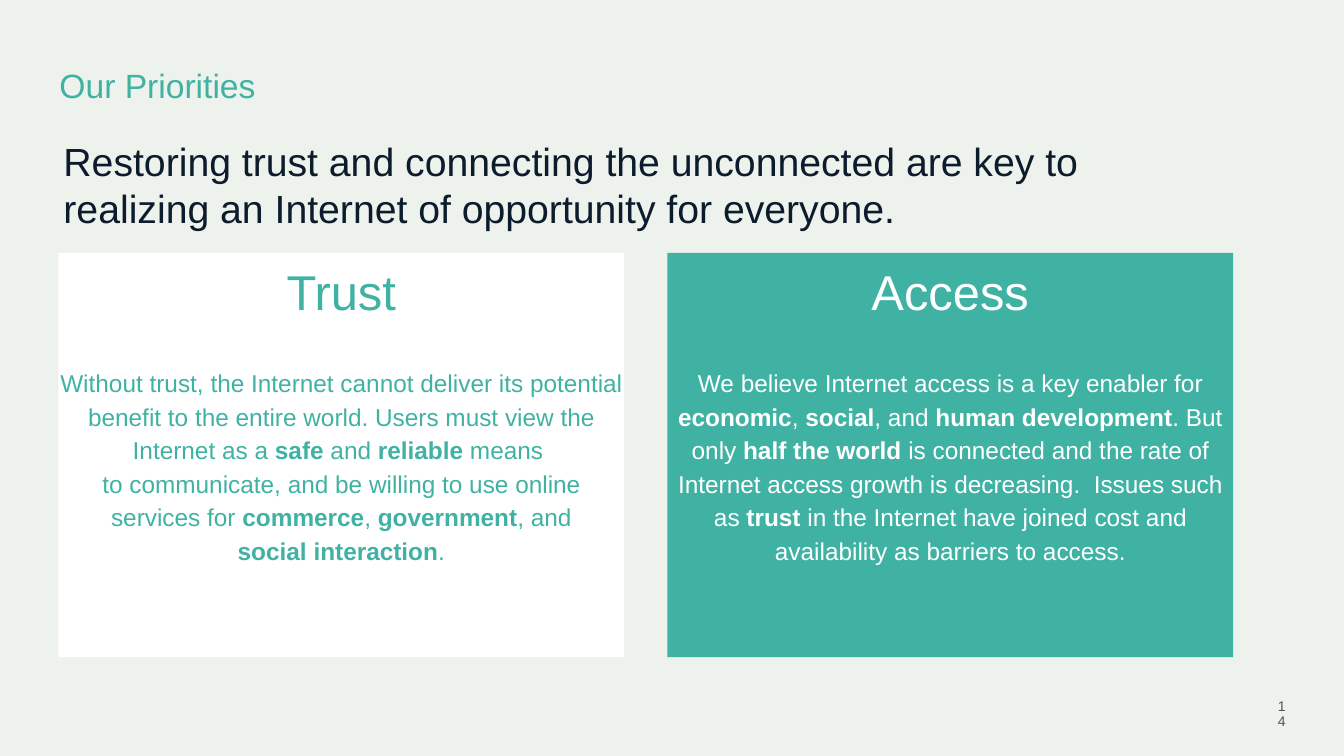
import pptx
import pptx.util
import pptx.dml.color
import pptx.enum.shapes
import pptx.enum.text

Inches = pptx.util.Inches
Pt = pptx.util.Pt
Align = pptx.enum.text.PP_ALIGN

COLORS = {
    "background": "EEF2EC",
    "teal": "40B2A4",
    "white": "FFFFFF",
    "navy": "0C1C2C",
    "grey": "535353",
}

TRUST = (
    "Without trust, the Internet cannot deliver its potential benefit to the entire world. "
    "Users must view the Internet as a **safe** and **reliable** means \n"
    "to communicate, and be willing to use online services for "
    "**commerce**, **government**, and\n**social interaction**."
)
ACCESS = (
    "We believe Internet access is a key enabler for **economic**, **social**, and "
    "**human development**. But only **half the world **is connected and the rate of "
    "Internet access growth is decreasing.  Issues such as **trust** in the Internet "
    "have joined cost and availability as barriers to access."
)


def color(name):
    return pptx.dml.color.RGBColor.from_string(COLORS[name])


def apply(target, values):
    for name, value in values.items():
        setattr(target, name, value)


def prepare_frame(frame, inset=0):
    margin = Inches(inset)
    apply(frame, {
        "word_wrap": True,
        "vertical_anchor": pptx.enum.text.MSO_ANCHOR.TOP,
        "margin_left": margin,
        "margin_top": margin,
        "margin_right": margin,
        "margin_bottom": margin,
    })


def write_paragraph(paragraph, text, size, ink, **layout):
    apply(paragraph, layout)
    for part, phrase in enumerate(text.split("**")):
        for line, words in enumerate(phrase.split("\n")):
            if line:
                paragraph.add_line_break()
            if words:
                run = paragraph.add_run()
                run.text = words
                apply(run.font, {"name": "Arial", "size": Pt(size), "bold": part % 2 == 1})
                run.font.color.rgb = color(ink)


def add_label(slide, box, text, size, ink, inset=0, **layout):
    frame = slide.shapes.add_textbox(*map(Inches, box)).text_frame
    prepare_frame(frame, inset)
    write_paragraph(frame.paragraphs[0], text, size, ink, **layout)


def add_priority(slide, box, heading, body, fill, ink):
    card = slide.shapes.add_shape(
        pptx.enum.shapes.MSO_SHAPE.RECTANGLE, *map(Inches, box))
    card.shadow.inherit = False
    card.fill.solid()
    card.fill.fore_color.rgb = color(fill)
    card.line.fill.background()
    frame = card.text_frame
    prepare_frame(frame)
    layout = {"alignment": Align.CENTER, "line_spacing": 1.15}
    write_paragraph(frame.paragraphs[0], heading, 34.9, ink, **layout)
    write_paragraph(frame.add_paragraph(), body, 17.4, ink, space_before=Pt(31), **layout)


def add_priorities(slide, box):
    left, top, width, height = box
    gap = 0.43
    card_width = (width - gap) / 2
    cards = [("Trust", TRUST, "white", "teal"), ("Access", ACCESS, "teal", "white")]
    for column, card in enumerate(cards):
        card_left = left + column * (card_width + gap)
        add_priority(slide, (card_left, top, card_width, height), *card)


def main():
    deck = pptx.Presentation()
    apply(deck, {"slide_width": Inches(13.33), "slide_height": Inches(7.5)})
    slide = deck.slides.add_slide(deck.slide_layouts[6])
    slide.background.fill.solid()
    slide.background.fill.fore_color.rgb = color("background")

    add_label(slide, (0.59, 0.62, 12.16, 0.54), "Our Priorities", 24, "teal",
              line_spacing=1.06)
    add_priorities(slide, (0.58, 2.51, 11.65, 4.01))
    add_label(slide, (12.61, 6.94, 0.14, 0.22), "14", 10, "grey",
              alignment=Align.RIGHT, line_spacing=0.9)
    add_label(slide, (0.58, 1.31, 11.2, 1.35),
              "Restoring trust and connecting the unconnected are key to "
              "realizing an Internet of opportunity for everyone.",
              28, "navy", inset=0.05)
    deck.save("out.pptx")


if __name__ == "__main__":
    main()
